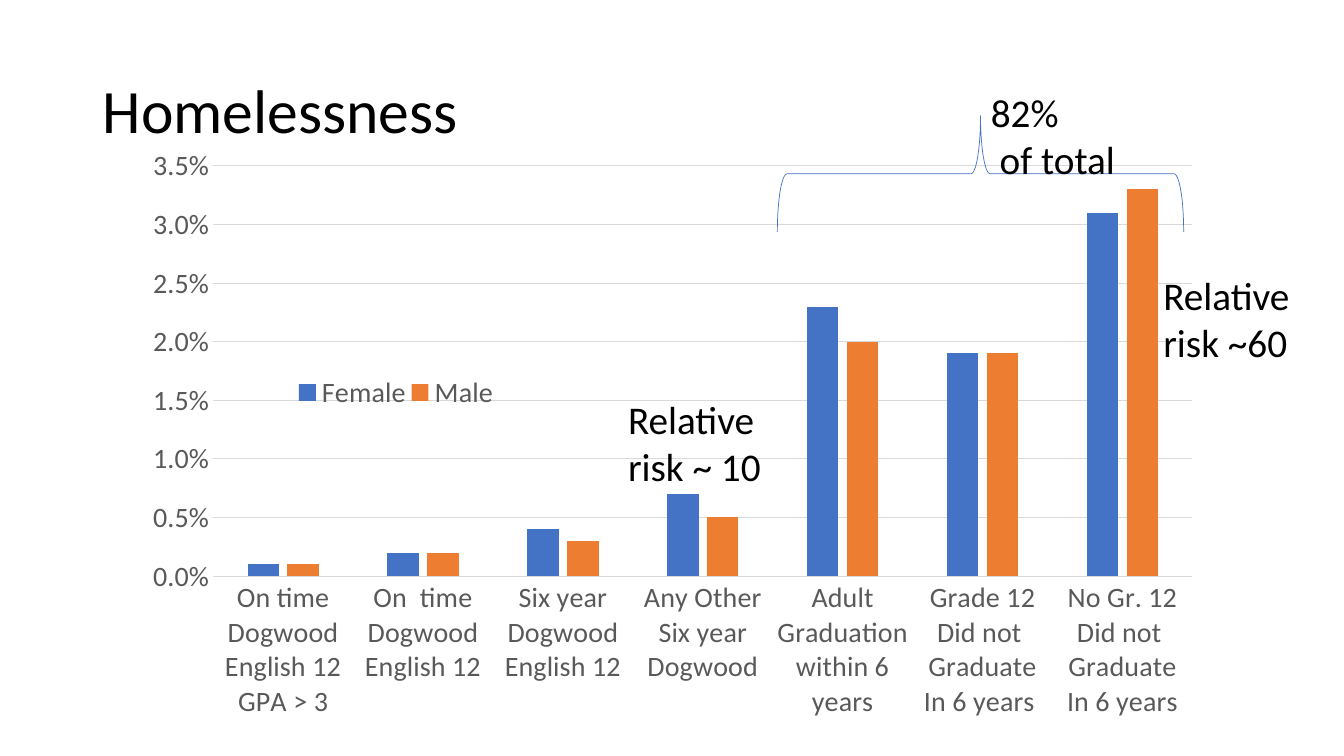
from lxml import etree
from pptx import Presentation
from pptx.chart.data import CategoryChartData
from pptx.dml.color import RGBColor
from pptx.enum.chart import XL_CHART_TYPE, XL_LEGEND_POSITION, XL_TICK_MARK
from pptx.enum.shapes import MSO_SHAPE
from pptx.enum.text import MSO_ANCHOR, MSO_AUTO_SIZE
from pptx.oxml.ns import qn
from pptx.util import Inches, Pt

COLUMN = XL_CHART_TYPE.COLUMN_CLUSTERED
BOTTOM = XL_LEGEND_POSITION.BOTTOM
NO_TICK = XL_TICK_MARK.NONE
BRACE = MSO_SHAPE.LEFT_BRACE
MIDDLE, TOP = MSO_ANCHOR.MIDDLE, MSO_ANCHOR.TOP
GROW, FIXED = MSO_AUTO_SIZE.SHAPE_TO_FIT_TEXT, MSO_AUTO_SIZE.NONE

BLACK, GRAY, RULE = "000000", "595959", "D9D9D9"
BLUE, ORANGE = "4472C4", "ED7D31"

GROUPS = [
    "On time\nDogwood\nEnglish 12\nGPA > 3",
    "On  time\nDogwood\nEnglish 12",
    "Six year\nDogwood\nEnglish 12",
    "Any Other\nSix year\nDogwood",
    "Adult\nGraduation\nwithin 6 years",
    "Grade 12\nDid not \nGraduate\nIn 6 years ",
    "No Gr. 12\nDid not \nGraduate\nIn 6 years",
]
RATES = {
    "Female": (BLUE, [0.001, 0.002, 0.004, 0.007, 0.023, 0.019, 0.031]),
    "Male": (ORANGE, [0.001, 0.002, 0.003, 0.005, 0.02, 0.019, 0.033]),
}


def color(code):
    return RGBColor.from_string(code)


def apply(target, values):
    for name, value in values.items():
        setattr(target, name, value)


def layout(share, inner=False):
    """Manual chart layout from shares of the chart's size."""
    root = etree.Element(qn("c:layout"))
    manual = etree.SubElement(root, qn("c:manualLayout"))
    marks = {"layoutTarget": "inner"} if inner else {}
    marks |= {"xMode": "edge", "yMode": "edge"}
    marks |= dict(zip("xywh", share))
    for tag, value in marks.items():
        etree.SubElement(manual, qn(f"c:{tag}")).set("val", str(value))
    return root


class Deck:
    """Style and current slide; places are percent of the slide's size."""

    face = "Calibri"

    def __init__(self):
        self.prs = Presentation()
        apply(self.prs, {"slide_width": Inches(13.33), "slide_height": Inches(7.5)})
        self.slide = self.prs.slides.add_slide(self.prs.slide_layouts[6])
        self.shapes = self.slide.shapes

    def place(self, left, top, width, height):
        wide, high = self.prs.slide_width / 100, self.prs.slide_height / 100
        return [round(n) for n in (left * wide, top * high, width * wide, height * high)]

    def style(self, font, size, code):
        apply(font, {"name": self.face, "size": Pt(size)})
        font.color.rgb = color(code)

    def text(self, lines, box, size=28, space=1.0, anchor=TOP, fit=GROW):
        frame = self.shapes.add_textbox(*self.place(*box)).text_frame
        apply(frame, {"word_wrap": True, "auto_size": fit, "vertical_anchor": anchor})
        frame.text = "\n".join(lines)
        for para in frame.paragraphs:
            para.line_spacing = space
            for run in para.runs:
                self.style(run.font, size, BLACK)

    def brace(self, box):
        shape = self.shapes.add_shape(BRACE, *self.place(*box))
        shape.rotation = 90
        shape.shadow.inherit = False
        shape.fill.background()
        shape.line.color.rgb = color(BLUE)
        shape.line.width = Pt(0.5)

    def rule(self, line):
        line.color.rgb = color(RULE)
        line.width = Pt(0.75)

    def chart(self, groups, rates, box, plot_at, key_at):
        data = CategoryChartData(number_format="0.0%")
        data.categories = groups
        for name, (_, values) in rates.items():
            data.add_series(name, values)
        chart = self.shapes.add_chart(COLUMN, *self.place(*box), data).chart
        apply(chart, {"has_title": False, "has_legend": True})
        self.style(chart.font, 20, GRAY)

        # Bars
        plot = chart.plots[0]
        apply(plot, {"gap_width": 219, "overlap": -27, "vary_by_categories": False})
        for bars, (code, _) in zip(plot.series, rates.values()):
            bars.format.fill.solid()
            bars.format.fill.fore_color.rgb = color(code)

        # Axes
        cats, vals = chart.category_axis, chart.value_axis
        for axis in (cats, vals):
            apply(axis, {"major_tick_mark": NO_TICK, "minor_tick_mark": NO_TICK})
            self.style(axis.tick_labels.font, 20, GRAY)
        self.rule(cats.format.line)
        self.rule(vals.major_gridlines.format.line)
        vals.format.line.fill.background()
        apply(vals, {"minimum_scale": 0, "maximum_scale": 0.035, "major_unit": 0.005})
        apply(vals.tick_labels, {"number_format": "0.0%", "number_format_is_linked": False})

        # Legend and plot area
        apply(chart.legend, {"position": BOTTOM, "include_in_layout": False})
        self.style(chart.legend.font, 20, GRAY)
        root = chart.element
        for old in root.xpath(".//c:plotArea/c:layout | .//c:legend/c:layout"):
            old.getparent().remove(old)
        root.xpath(".//c:plotArea")[0].insert(0, layout(plot_at, inner=True))
        root.xpath(".//c:legendPos")[0].addnext(layout(key_at))


def main():
    deck = Deck()

    # Title
    deck.text(["Homelessness"], (6.9, 5.33, 86.27, 19.33), 44, 0.9, MIDDLE, FIXED)

    # Rates by graduation group
    deck.chart(GROUPS, RATES, (9.75, 18, 80.5, 85.87),
               plot_at=(0.076, 0.046, 0.905, 0.632), key_at=(0.15, 0.36, 0.19, 0.07))

    # Risk notes
    deck.text(["Relative risk ~60"], (85.82, 35.2, 12.45, 13.87))
    deck.text(["Relative risk ~ 10"], (45.99, 51.6, 14.48, 13.87))

    # Share of the last three groups
    deck.brace((68.64, -3.87, 8.63, 53.73))
    deck.text(["82%", " of total"], (72.99, 11.07, 13.28, 13.87))

    deck.prs.save("out.pptx")


if __name__ == "__main__":
    main()
